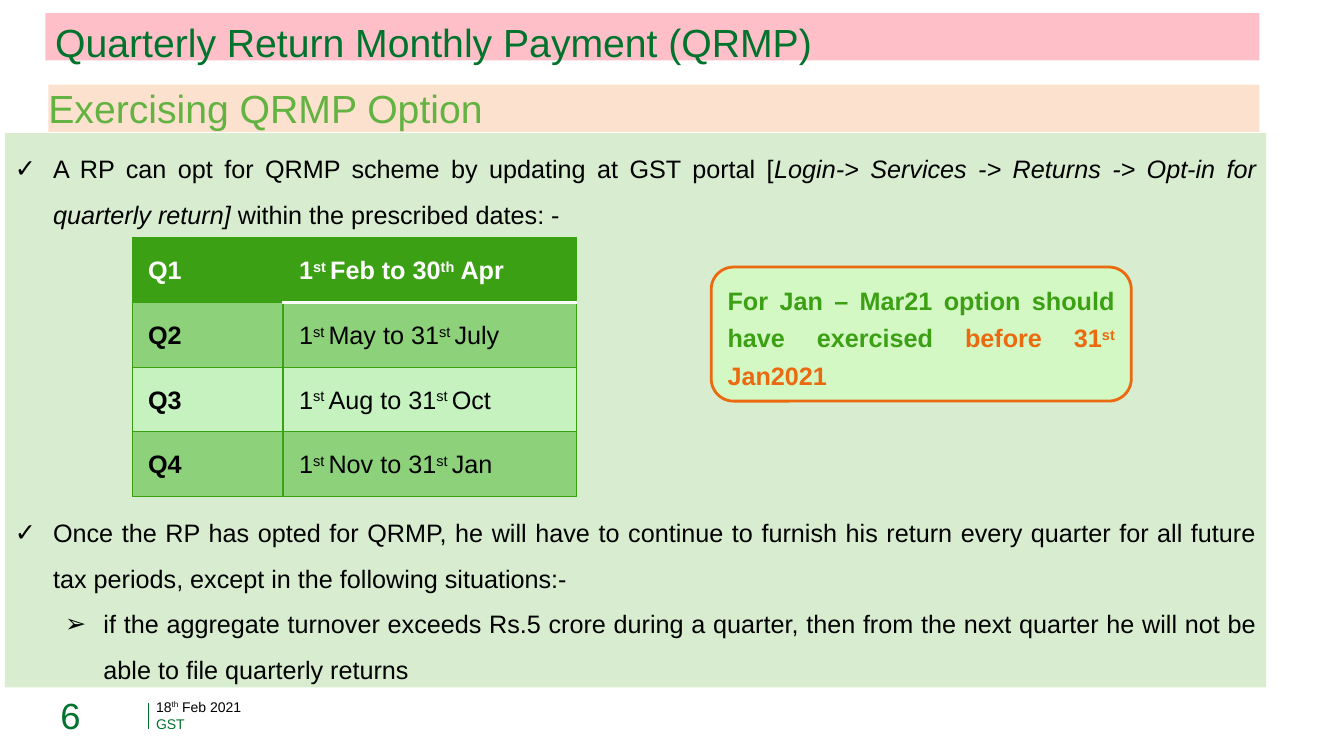
import pptx
import pptx.util
import pptx.dml.color
import pptx.enum.shapes
import pptx.enum.text
import pptx.oxml
import pptx.oxml.ns

Pt = pptx.util.Pt
Shape = pptx.enum.shapes.MSO_SHAPE
Align = pptx.enum.text.PP_ALIGN
Anchor = pptx.enum.text.MSO_ANCHOR
NS = pptx.oxml.ns.nsdecls("a")

HUES = {
    "dark": "00732D", "black": "000000", "white": "FFFFFF", "leaf": "63B343",
    "peach": "FCE1CE", "pink": "FFBFC9", "panel": "D8ECD0", "green": "3CA014",
    "edge": "39A010", "band": "8DD27A", "pale": "C6F2C0", "mint": "D3F8C4",
    "orange": "EB690F",
}


class Deck:
    font = "Arial"
    wide, high = pptx.util.Inches(13.34), pptx.util.Inches(7.5)

    def __init__(self):
        self.file = pptx.Presentation()
        self.file.slide_width, self.file.slide_height = self.wide, self.high
        self.slide = self.file.slides.add_slide(self.file.slide_layouts[6])

    def col(self, n):
        return int(self.wide * n / 100)

    def row(self, n):
        return int(self.high * n / 100)

    def place(self, x, y, w, h):
        return self.col(x), self.row(y), self.col(w), self.row(h)

    def hue(self, name):
        return pptx.dml.color.RGBColor.from_string(HUES[name])

    def frame(self, item, pad, anchor):
        text = item.text_frame
        text.word_wrap = True
        text.vertical_anchor = anchor
        if not pad:
            text.margin_left = text.margin_right = 0
            text.margin_top = text.margin_bottom = 0
        return text

    def label(self, spot, runs, size, hue, anchor=Anchor.MIDDLE):
        box = self.slide.shapes.add_textbox(*self.place(*spot))
        text = self.frame(box, False, anchor)
        self.say(text.paragraphs[0], runs, size, hue)

    def block(self, spot, fill, kind=Shape.RECTANGLE, line=None, pad=True,
              anchor=Anchor.TOP):
        item = self.slide.shapes.add_shape(kind, *self.place(*spot))
        item.shadow.inherit = False
        item.fill.solid()
        item.fill.fore_color.rgb = self.hue(fill)
        if line:
            item.line.color.rgb = self.hue(line)
            item.line.width = Pt(2)
        else:
            item.line.fill.background()
        return self.frame(item, pad, anchor)

    def say(self, para, runs, size, hue, bold=False, align=Align.LEFT):
        para.alignment = align
        for words, *marks in runs:
            run = para.add_run()
            run.text = words
            run.font.name, run.font.size = self.font, Pt(size)
            run.font.bold = bold
            run.font.italic = "slant" in marks
            tint = next((m for m in marks if m in HUES), hue)
            run.font.color.rgb = self.hue(tint)
            if "raise" in marks:
                run._r.get_or_add_rPr().set("baseline", "30000")

    def point(self, para, mark, runs, left, level=0, gap=0):
        props = para._p.get_or_add_pPr()
        props.set("marL", str(pptx.util.Inches(left)))
        props.set("indent", str(pptx.util.Inches(-0.38)))
        for part in (f'<a:buFont {NS} typeface="Arial"/>',
                     f'<a:buChar {NS} char="{mark}"/>'):
            props.append(pptx.oxml.parse_xml(part))
        para.level = level
        para.line_spacing = Pt(32.5)
        if gap:
            para.space_before = Pt(gap)
        self.say(para, runs, 18, "black", align=Align.JUSTIFY)

    def rule(self, x, top, end, hue):
        line = self.slide.shapes.add_connector(
            pptx.enum.shapes.MSO_CONNECTOR.STRAIGHT,
            self.col(x), self.row(top), self.col(x), self.row(end))
        line.line.color.rgb = self.hue(hue)
        line.line.width = Pt(0.5)
        line._element.spPr.append(pptx.oxml.parse_xml(f"<a:effectLst {NS}/>"))

    def edge(self, cell, side, hue, width):
        cell._tc.get_or_add_tcPr().append(pptx.oxml.parse_xml(
            f'<a:ln{side} {NS} w="{Pt(width)}"><a:solidFill>'
            f'<a:srgbClr val="{HUES[hue]}"/></a:solidFill></a:ln{side}>'))

    def cell(self, cell, runs, fill, hue, bold, edges):
        for side, (tint, width) in edges.items():
            self.edge(cell, side, tint, width)
        cell.fill.solid()
        cell.fill.fore_color.rgb = self.hue(fill)
        cell.vertical_anchor = Anchor.MIDDLE
        cell.margin_left = cell.margin_right = pptx.util.Inches(0.16)
        cell.margin_top = cell.margin_bottom = pptx.util.Inches(0.16)
        para = cell.text_frame.paragraphs[0]
        para.line_spacing = 1.07
        self.say(para, runs, 18, hue, bold)

    def table(self, x, y, widths, height, rows):
        spot = self.place(x, y, sum(widths), height * len(rows))
        grid = self.slide.shapes.add_table(len(rows), len(widths), *spot).table
        grid.horz_banding = False
        for c, width in enumerate(widths):
            grid.columns[c].width = self.col(width)
        thin, thick, white = ("edge", 0.75), ("green", 2), ("white", 2)
        fills = ("green", "band", "pale", "band")
        for r, cells in enumerate(rows):
            grid.rows[r].height = self.row(height)
            for c, runs in enumerate(cells):
                edges = {"L": thick if c else thin,
                         "R": thin if c else thick,
                         "T": white if c and r == 1 else thin,
                         "B": white if c and r == 0 else thin}
                self.cell(grid.cell(r, c), runs, fills[r],
                          "black" if r else "white", r == 0 or c == 0, edges)


def term(start, day, power, end):
    last = [(power, "raise"), (f" {end}",)]
    if power == "st":
        last = [("st ", "raise"), (end,)]
    return [("1",), ("st ", "raise"), (f"{start} to {day}",), *last]


def main():
    deck = Deck()
    deck.label((4.5, 92.4, 6.52, 5.07), [("6",)], 26, "dark", Anchor.BOTTOM)
    deck.label((11.62, 92.4, 21.29, 2.13),
               [("18",), ("th", "raise"), (" Feb 2021",)], 10, "black")
    deck.label((11.62, 94.67, 52.55, 2.13), [("GST",)], 10, "dark")
    deck.rule(11.02, 92.93, 96.4, "dark")

    head = deck.block((3.6, 11.2, 90.1, 6.27), "peach", pad=False)
    deck.say(head.paragraphs[0], [("Exercising QRMP Option",)], 28, "leaf")
    title = deck.block((3.37, 1.73, 90.33, 6.27), "pink")
    deck.say(title.paragraphs[0],
             [("Quarterly Return Monthly Payment (QRMP)",)], 28, "dark")

    body = deck.block((0.37, 17.6, 93.85, 73.33), "panel")
    deck.point(body.paragraphs[0], "✓", [
        ("A RP can opt for QRMP scheme by updating at GST portal [",),
        ("Login-> Services -> Returns -> Opt-in for quarterly return]", "slant"),
        (" within the prescribed dates: -",)], 0.38)
    deck.point(body.add_paragraph(), "✓", [
        ("Once the RP has opted for QRMP, he will have to continue to furnish "
         "his return every quarter for all future tax periods, except in the "
         "following situations:-",)], 0.38, gap=195)
    deck.point(body.add_paragraph(), "➢", [
        ("if the aggregate turnover exceeds Rs.5 crore during a quarter, then "
         "from the next quarter he will not be able to file quarterly returns",)],
        0.88, level=1)

    terms = [term("Feb", 30, "th", "Apr"), term("May", 31, "st", "July"),
             term("Aug", 31, "st", "Oct"), term("Nov", 31, "st", "Jan")]
    deck.table(9.82, 31.47, (11.24, 21.81), 8.4,
               [([(f"Q{n}",)], runs) for n, runs in enumerate(terms, 1)])

    note = deck.block((52.92, 35.33, 31.26, 17.73), "mint",
                      Shape.ROUNDED_RECTANGLE, "orange", anchor=Anchor.MIDDLE)
    note.paragraphs[0].line_spacing = Pt(27)
    deck.say(note.paragraphs[0], [
        ("For Jan – Mar21 option should have exercised ",),
        ("before 31", "orange"), ("st", "orange", "raise"),
        (" Jan2021", "orange")], 18, "green", True, Align.JUSTIFY)
    deck.file.save("out.pptx")


if __name__ == "__main__":
    main()
